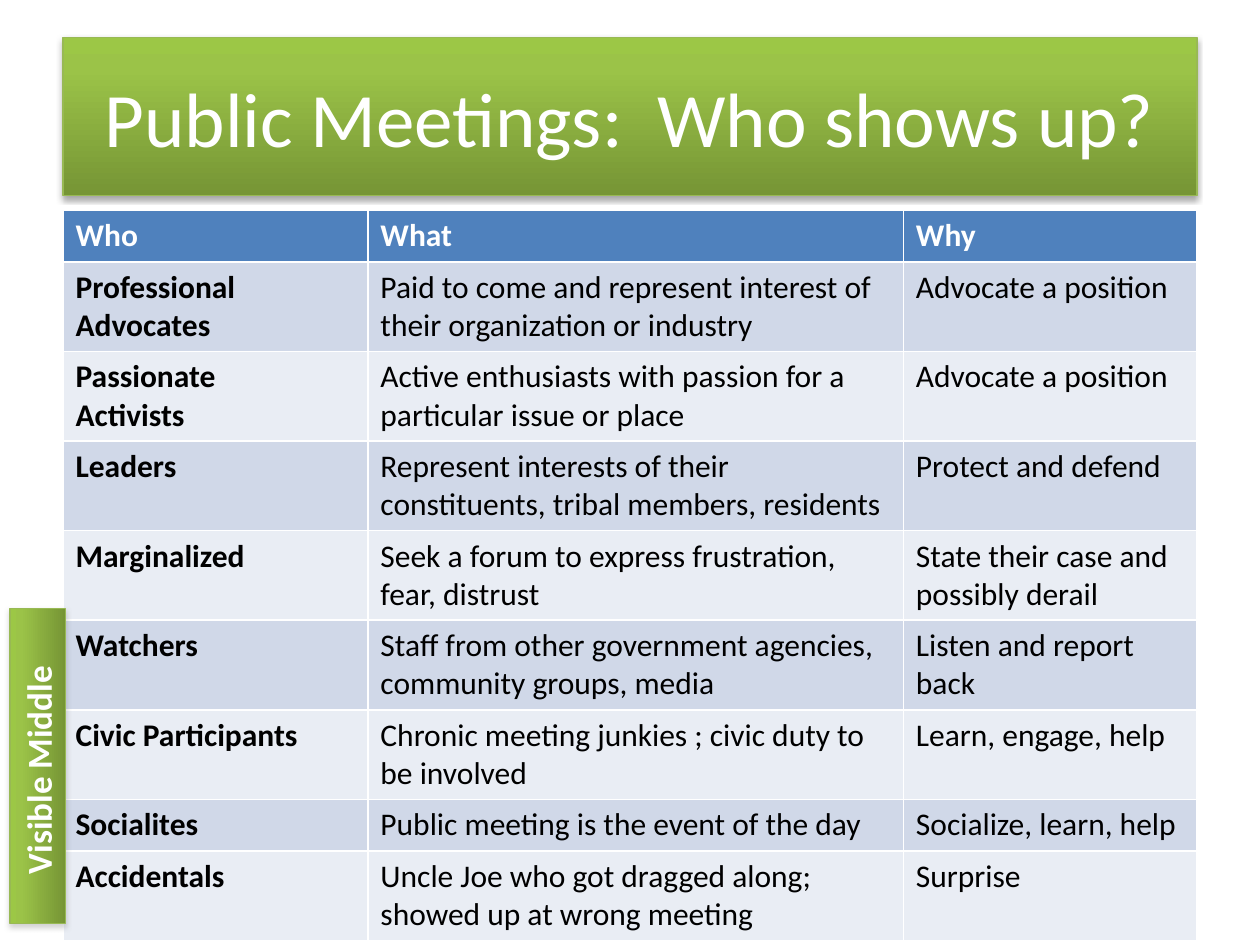
from copy import deepcopy

from lxml.etree import SubElement
from pptx import Presentation
from pptx.dml.color import RGBColor
from pptx.enum.shapes import MSO_SHAPE
from pptx.enum.text import MSO_ANCHOR, PP_ALIGN
from pptx.oxml.ns import qn
from pptx.util import Inches, Pt

FONT = "Calibri"
WHITE, BLACK = "FFFFFF", "000000"
HEADER_FILL, BANDS = "4F81BD", ("D0D8E8", "E9EDF4")
GREEN_STOPS = [(0, "9CC746"), (0.2, "9BC348"), (1, "769535")]
GREEN_LINE = "98B954"

TITLE = "Public Meetings:  Who shows up?"
SIDE_LABEL = "Visible Middle "
COLUMN_WIDTHS = (2.42, 4.25, 2.33)
ONE_LINE, TWO_LINES = 0.41, 0.71
ROWS = [
    (ONE_LINE, "Who", "What", "Why"),
    (TWO_LINES, "Professional Advocates",
     "Paid to come and represent interest of their organization or industry",
     "Advocate a position"),
    (TWO_LINES, "Passionate\nActivists",
     "Active enthusiasts with passion for a particular issue or place",
     "Advocate a position"),
    (TWO_LINES, "Leaders",
     "Represent interests of their constituents, tribal members, residents",
     "Protect and defend"),
    (TWO_LINES, "Marginalized",
     "Seek a forum to express frustration, fear, distrust",
     "State their case and possibly derail"),
    (TWO_LINES, "Watchers",
     "Staff from other government agencies, community groups, media",
     "Listen and report back"),
    (TWO_LINES, "Civic Participants",
     "Chronic meeting junkies ; civic duty to be involved",
     "Learn, engage, help"),
    (ONE_LINE, "Socialites", "Public meeting is the event of the day",
     "Socialize, learn, help"),
    (TWO_LINES, "Accidentals",
     "Uncle Joe who got dragged along; showed up at wrong meeting",
     "Surprise"),
]


def rgb(value):
    return RGBColor.from_string(value)


def style_text(frame, size, color, bold=False, align=None):
    for para in frame.paragraphs:
        para.alignment = align
        para.font.name = FONT
        para.font.size = Pt(size)
        para.font.bold = bold
        para.font.color.rgb = rgb(color)


def fill_green(shape):
    """Apply the three-stop gradient, running from top to bottom."""
    shape.fill.gradient()
    shape.fill.gradient_angle = 270
    stop_list = shape._element.spPr.find(qn("a:gradFill")).find(qn("a:gsLst"))
    stop_list.append(deepcopy(stop_list[0]))
    for stop, (position, color) in zip(shape.fill.gradient_stops, GREEN_STOPS):
        stop.position = position
        stop.color.rgb = rgb(color)


def cast_shadow(shape, color):
    """Give the shape a soft shadow straight below it."""
    shape.shadow.inherit = False
    effects = shape._element.spPr.find(qn("a:effectLst"))
    shadow = SubElement(effects, qn("a:outerShdw"), blurRad=str(Pt(3.1)),
                        dist=str(Pt(1.8)), dir="5400000", rotWithShape="0")
    tint = SubElement(shadow, qn("a:srgbClr"), val=color)
    SubElement(tint, qn("a:alpha"), val="35000")


def add_banner(page, place, text, size, shadow, bold=False):
    banner = page.shapes.add_shape(MSO_SHAPE.RECTANGLE, *map(Inches, place))
    fill_green(banner)
    banner.line.color.rgb = rgb(GREEN_LINE)
    banner.line.width = Pt(0.75)
    cast_shadow(banner, shadow)
    frame = banner.text_frame
    frame.word_wrap = True
    frame.vertical_anchor = MSO_ANCHOR.MIDDLE
    frame.text = text
    style_text(frame, size, WHITE, bold, PP_ALIGN.CENTER)
    return banner


def add_meeting_table(page):
    height = sum(row[0] for row in ROWS)
    table = page.shapes.add_table(
        len(ROWS), len(COLUMN_WIDTHS), Inches(0.5), Inches(1.67),
        Inches(sum(COLUMN_WIDTHS)), Inches(height)).table
    for column, width in zip(table.columns, COLUMN_WIDTHS):
        column.width = Inches(width)
    for r, (row_height, *texts) in enumerate(ROWS):
        table.rows[r].height = Inches(row_height)
        header = r == 0
        for c, text in enumerate(texts):
            cell = table.cell(r, c)
            cell.fill.solid()
            cell.fill.fore_color.rgb = rgb(
                HEADER_FILL if header else BANDS[(r - 1) % 2])
            cell.text = text
            style_text(cell.text_frame, 18, WHITE if header else BLACK,
                       bold=header or c == 0)


def main():
    deck = Presentation()
    deck.slide_width, deck.slide_height = Inches(10), Inches(7.5)
    page = deck.slides.add_slide(deck.slide_layouts[6])
    add_banner(page, (0.5, 0.3, 9, 1.25), TITLE, 44, BLACK)
    add_meeting_table(page)
    side = add_banner(page, (-0.95, 5.86, 2.5, 0.44), SIDE_LABEL, 20,
                      "808080", bold=True)
    side.rotation = 270
    deck.save("out.pptx")


if __name__ == "__main__":
    main()
